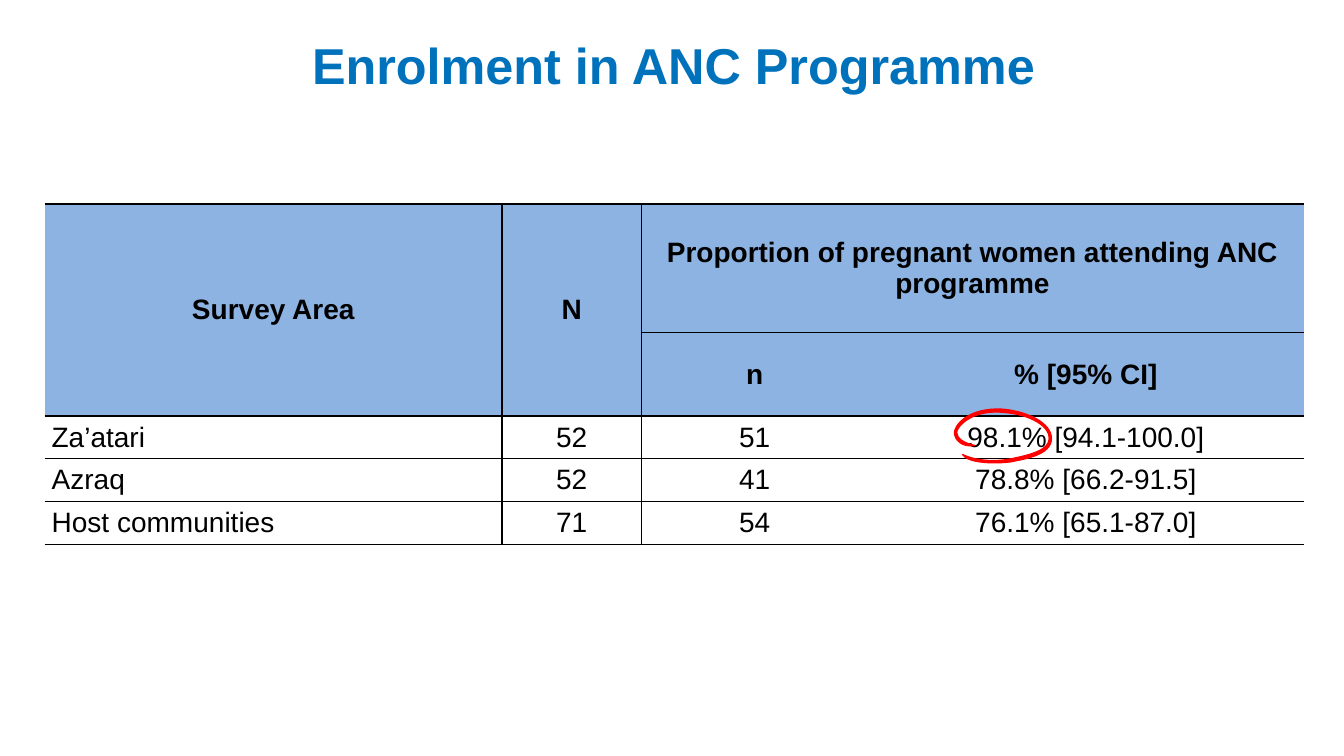
"""Build the slide on enrolment in the ANC programme."""
import pptx
import pptx.dml.color
import pptx.enum.text
import pptx.oxml
import pptx.oxml.ns
import pptx.util

Pt = pptx.util.Pt
ALIGN = pptx.enum.text.PP_ALIGN
ANCHOR = pptx.enum.text.MSO_ANCHOR


def color(hex_string):
    return pptx.dml.color.RGBColor.from_string(hex_string)


def write(frame, text, size=20, fill="000000", bold=False, align=ALIGN.CENTER, spacing=1.0):
    paragraph = frame.paragraphs[0]
    paragraph.alignment = align
    paragraph.line_spacing = spacing
    run = paragraph.add_run()
    run.text = text
    run.font.name = "Arial"
    run.font.size = Pt(size)
    run.font.bold = bold
    run.font.color.rgb = color(fill)


presentation = pptx.Presentation()
presentation.slide_width = Pt(960)
presentation.slide_height = Pt(540)
slide = presentation.slides.add_slide(presentation.slide_layouts[6])

title = slide.shapes.add_textbox(Pt(21.6), Pt(21.6), Pt(919.4), Pt(46.8))
frame = title.text_frame
frame.word_wrap = True
frame.vertical_anchor = ANCHOR.BOTTOM
frame.margin_left = frame.margin_right = frame.margin_top = frame.margin_bottom = 0
write(frame, "Enrolment in ANC Programme", size=36, fill="0072BC", bold=True, spacing=0.9)

rows = [
    ["Survey Area", "N", "Proportion of pregnant women attending ANC programme", ""],
    ["", "", "n", "% [95% CI]"],
    ["Za’atari", "52", "51", "98.1% [94.1-100.0]"],
    ["Azraq", "52", "41", "78.8% [66.2-91.5]"],
    ["Host communities", "71", "54", "76.1% [65.1-87.0]"],
]
column_widths = [326.7, 99.5, 162, 311.2]
row_heights = [91.7, 59.6, 30.6, 30.6, 30.6]
horizontal_lines = [1.5, 1, 1.5, 1, 1, 1.5]
vertical_lines = [0, 1, 1, 0, 0]

table = slide.shapes.add_table(
    5, 4, Pt(31.9), Pt(145.9), Pt(sum(column_widths)), Pt(sum(row_heights))).table
for column, width in zip(table.columns, column_widths):
    column.width = Pt(width)
for row, height in zip(table.rows, row_heights):
    row.height = Pt(height)
table.cell(0, 0).merge(table.cell(1, 0))
table.cell(0, 1).merge(table.cell(1, 1))
table.cell(0, 2).merge(table.cell(0, 3))

for row_index, row in enumerate(rows):
    header = row_index < 2
    for column_index, text in enumerate(row):
        cell = table.cell(row_index, column_index)
        cell.margin_left = cell.margin_right = Pt(5)
        cell.margin_top = cell.margin_bottom = 0
        cell.vertical_anchor = ANCHOR.MIDDLE
        tall = header and column_index < 2
        borders = {
            "L": vertical_lines[column_index],
            "R": vertical_lines[column_index + 1],
            "T": 0 if tall and row_index == 1 else horizontal_lines[row_index],
            "B": horizontal_lines[2 if tall else row_index + 1],
        }
        for side, width in borders.items():
            paint = '<a:solidFill><a:srgbClr val="000000"/></a:solidFill>' if width else "<a:noFill/>"
            cell._tc.get_or_add_tcPr().append(pptx.oxml.parse_xml(
                f'<a:ln{side} {pptx.oxml.ns.nsdecls("a")} w="{Pt(width)}">{paint}</a:ln{side}>'))
        if header:
            cell.fill.solid()
            cell.fill.fore_color.rgb = color("8DB3E2")
        else:
            cell.fill.background()
        if text:
            left_aligned = column_index == 0 and not header
            write(cell.text_frame, text, bold=header,
                  align=ALIGN.LEFT if left_aligned else ALIGN.CENTER)

ring_start = (687.6, 324.7)
ring_curves = [
    [(698.4, 329.8), (712.8, 329.8), (722.9, 327.6)],
    [(737.3, 324.7), (749.5, 321.1), (749.5, 313.2)],
    [(750.2, 305.3), (737.3, 295.9), (716.4, 294.5)],
    [(693.4, 292.3), (683.3, 305.3), (683.3, 308.9)],
    [(683.3, 313.2), (689, 316.8), (696.2, 318.2)],
    [(686.9, 319.7), (681.8, 313.9), (681.8, 308.9)],
    [(681.8, 304.6), (690.5, 290.9), (716.4, 292.3)],
    [(733, 293.8), (751, 301.7), (751, 313.2)],
    [(751, 324.7), (733, 327.6), (722.2, 329.8)],
    [(712.1, 331.2), (691.9, 331.2), (687.6, 324.7)],
]
builder = slide.shapes.build_freeform(Pt(ring_start[0]), Pt(ring_start[1]))
builder.add_line_segments([(Pt(x), Pt(y)) for *_, (x, y) in ring_curves], close=True)
ring = builder.convert_to_shape()
segments = list(ring._element.iter(pptx.oxml.ns.qn("a:lnTo")))
for segment, curve in zip(segments, ring_curves):
    points = "".join(
        f'<a:pt x="{Pt(x) - ring.left}" y="{Pt(y) - ring.top}"/>' for x, y in curve)
    segment.getparent().replace(segment, pptx.oxml.parse_xml(
        f'<a:cubicBezTo {pptx.oxml.ns.nsdecls("a")}>{points}</a:cubicBezTo>'))
ring.shadow.inherit = False
ring.fill.solid()
ring.fill.fore_color.rgb = color("FF0000")
ring.line.color.rgb = color("FF0000")
ring.line.width = Pt(1)

presentation.save("out.pptx")
